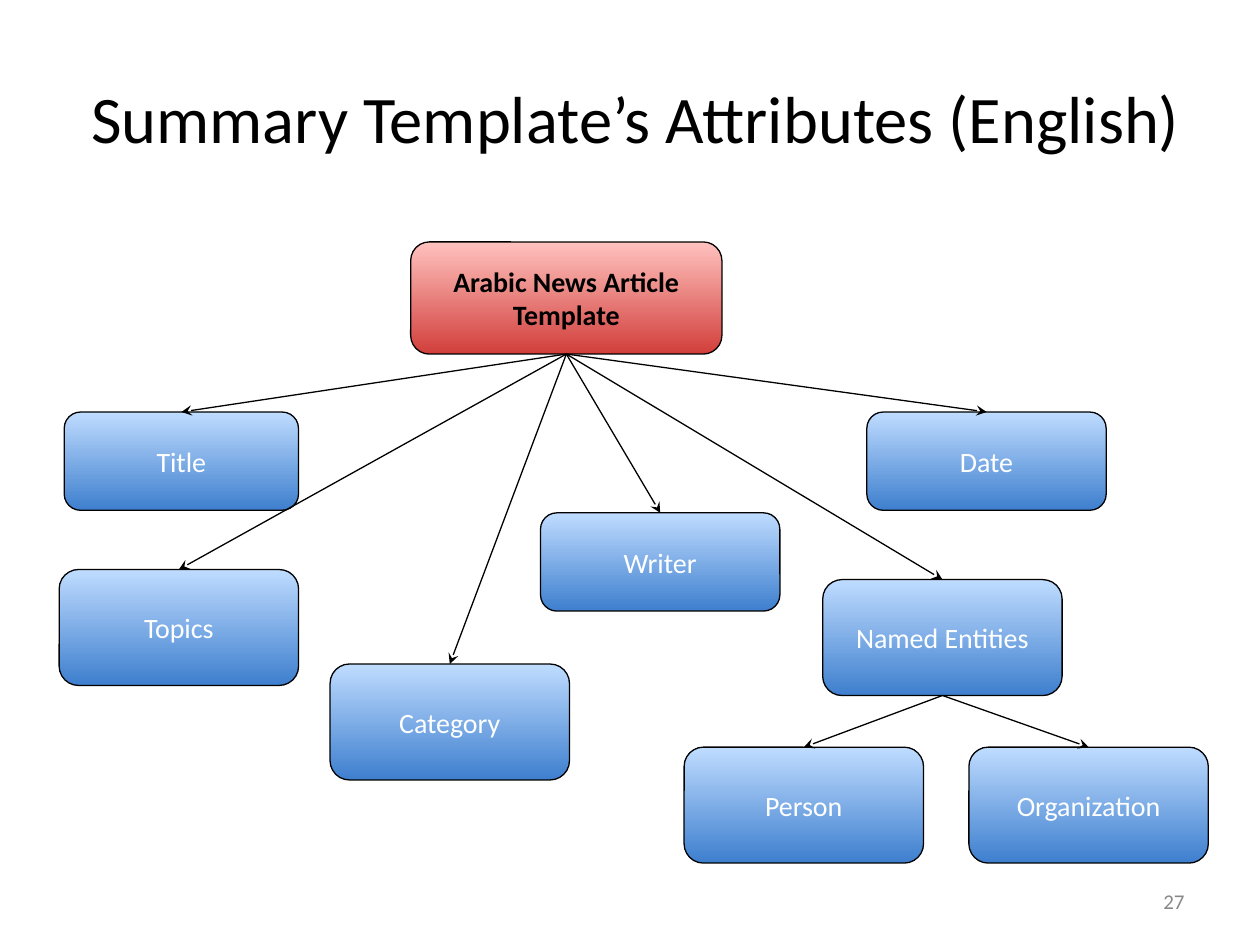
from pptx import Presentation
from pptx import util as u
from pptx.dml.color import RGBColor
from pptx.enum import shapes, text
from pptx.oxml.ns import qn
from lxml import etree

BLACK, WHITE, GREY = "000000", "FFFFFF", "888888"
RED, BLUE = ("D23F3B", "FFC2BF"), ("3E7FCE", "BFDCFF")


def colour(value):
    return RGBColor.from_string(value)


def write(holder, words, size=16, color=WHITE, bold=False, align=text.PP_ALIGN.CENTER):
    frame = holder.text_frame
    frame.word_wrap = True
    frame.auto_size = text.MSO_AUTO_SIZE.NONE
    frame.vertical_anchor = text.MSO_ANCHOR.MIDDLE
    paragraph = frame.paragraphs[0]
    paragraph.alignment = align
    run = paragraph.add_run()
    run.text = words
    run.font.name = "Calibri"
    run.font.size = u.Pt(size)
    run.font.bold = bold
    run.font.color.rgb = colour(color)


deck = Presentation()
deck.slide_width, deck.slide_height = u.Inches(10), u.Inches(7.5)
slide = deck.slides.add_slide(deck.slide_layouts[5])

heading = slide.shapes.title
heading.left, heading.top = u.Inches(0.5), u.Inches(0.3)
heading.width, heading.height = u.Inches(9.09), u.Inches(1.25)
write(heading, "Summary Template’s Attributes (English)", size=38, color=BLACK)

ROOT = "Arabic News Article Template"
attributes = [
    (ROOT, 3.26, 1.92, 2.47, 0.89),
    ("Topics", 0.47, 4.52, 1.9, 0.92),
    ("Named Entities", 6.53, 4.6, 1.9, 0.92),
    ("Writer", 4.29, 4.07, 1.9, 0.78),
    ("Date", 6.88, 3.27, 1.9, 0.78),
    ("Title", 0.51, 3.27, 1.86, 0.78),
    ("Category", 2.62, 5.27, 1.9, 0.92),
    ("Person", 5.43, 5.93, 1.9, 0.92),
    ("Organization", 7.69, 5.93, 1.9, 0.92),
]
nodes = {}
for label, *place in attributes:
    node = slide.shapes.add_shape(
        shapes.MSO_SHAPE.ROUNDED_RECTANGLE, *[u.Inches(n) for n in place])
    node.shadow.inherit = False
    node.fill.gradient()
    node.fill.gradient_angle = 90
    for stop, shade in zip(node.fill.gradient_stops, RED if label == ROOT else BLUE):
        stop.color.rgb = colour(shade)
    node.line.color.rgb = colour(BLACK)
    node.line.width = u.Pt(0.75)
    write(node, label, color=BLACK if label == ROOT else WHITE, bold=label == ROOT)
    nodes[label] = node

branches = {
    ROOT: ["Title", "Writer", "Date", "Topics", "Named Entities", "Category"],
    "Named Entities": ["Person", "Organization"],
}
for parent, children in branches.items():
    for child in children:
        arrow = slide.shapes.add_connector(shapes.MSO_CONNECTOR.STRAIGHT, 0, 0, 0, 0)
        arrow.begin_connect(nodes[parent], 2)
        arrow.end_connect(nodes[child], 0)
        arrow.line.color.rgb = colour(BLACK)
        arrow.line.width = u.Pt(0.75)
        etree.SubElement(arrow.line._get_or_add_ln(), qn("a:tailEnd"), type="stealth")
        etree.SubElement(arrow._element.spPr, qn("a:effectLst"))

page_number = slide.shapes.add_textbox(
    u.Inches(7.17), u.Inches(6.95), u.Inches(2.33), u.Inches(0.4))
write(page_number, "27", size=12, color=GREY, align=text.PP_ALIGN.RIGHT)

deck.save("out.pptx")
